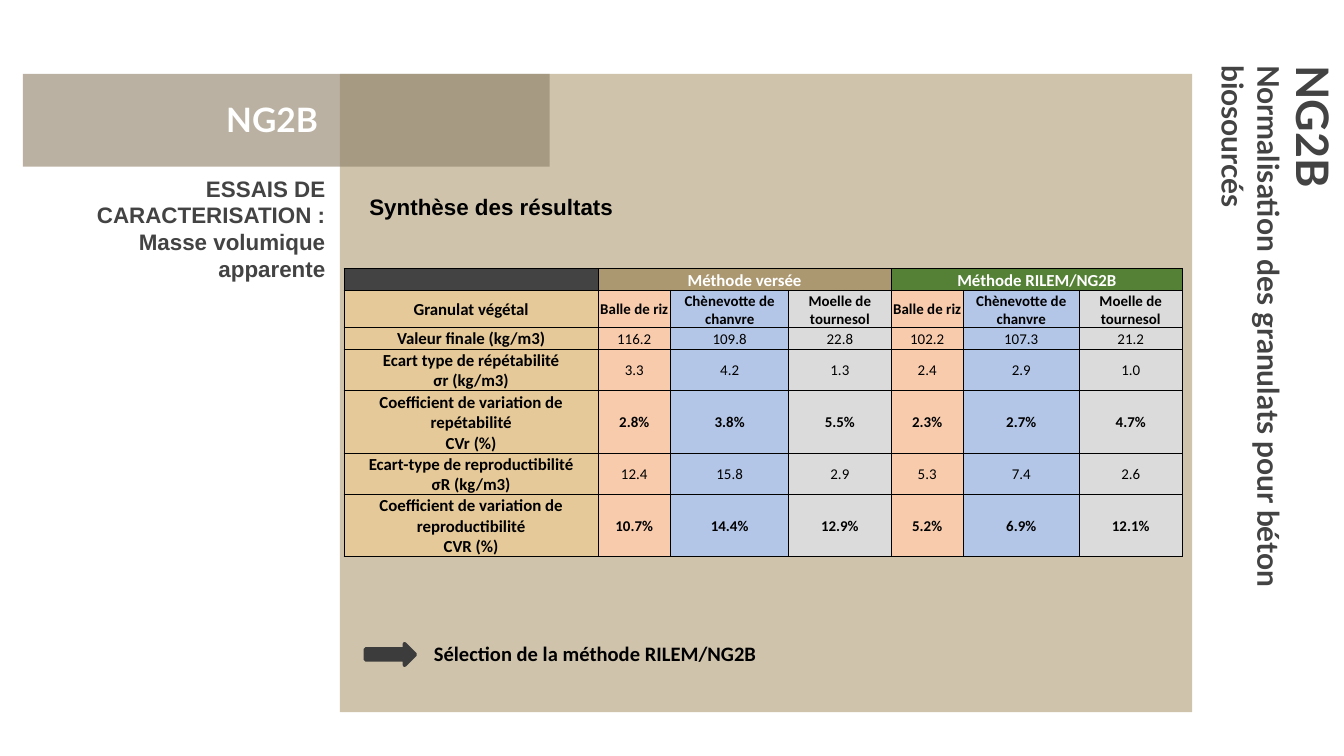
from lxml.etree import SubElement
from pptx import Presentation
from pptx.dml.color import RGBColor
from pptx.enum.shapes import MSO_SHAPE
from pptx.enum.text import MSO_ANCHOR, MSO_AUTO_SIZE, PP_ALIGN
from pptx.oxml.ns import qn
from pptx.util import Inches, Pt

# Content
PROJECT = "NG2B"
SUBTITLE = "Normalisation des granulats pour béton biosourcés"
TOPIC = ["ESSAIS DE CARACTERISATION :", "Masse volumique apparente"]
HEADING = "Synthèse des résultats"
CONCLUSION = "Sélection de la méthode RILEM/NG2B"
METHODS = [("Méthode versée", "AC9870"), ("Méthode RILEM/NG2B", "548135")]
MATERIALS = [("Balle de riz", "F8CBAC"), ("Chènevotte de chanvre", "B3C6E7"),
             ("Moelle de tournesol", "DBDBDB")]
RESULTS = [
    ("Valeur finale (kg/m3)", "116.2 109.8 22.8 102.2 107.3 21.2"),
    ("Ecart type de répétabilité\vσr (kg/m3)", "3.3 4.2 1.3 2.4 2.9 1.0"),
    ("Coefficient de variation de repétabilité\vCVr (%)", "2.8% 3.8% 5.5% 2.3% 2.7% 4.7%"),
    ("Ecart-type de reproductibilité\vσR (kg/m3)", "12.4 15.8 2.9 5.3 7.4 2.6"),
    ("Coefficient de variation de reproductibilité\vCVR (%)",
     "10.7% 14.4% 12.9% 5.2% 6.9% 12.1%"),
]
COLS = [1.89, 0.54, 0.88, 0.76, 0.54, 0.86, 0.77]
ROWS = [0.15, 0.26, 0.14, 0.31, 0.45, 0.31, 0.45]
DARK, BLACK, WHITE, LABEL = "434343", "000000", "FFFFFF", "E5C998"

# Widescreen 16:9 slide
prs = Presentation()
prs.slide_width, prs.slide_height = Inches(10), Inches(10 * 9 / 16)
slide = prs.slides.add_slide(prs.slide_layouts[5])


def color(value):
    return RGBColor.from_string(value)


def style(font, name, size, value, bold=True):
    font.name, font.size, font.bold = name, Pt(size), bold
    font.color.rgb = color(value)


def add_box(kind, x, y, w, h, fill):
    sp = slide.shapes.add_shape(kind, Inches(x), Inches(y), Inches(w), Inches(h))
    sp.shadow.inherit = False
    sp.fill.solid()
    sp.fill.fore_color.rgb = color(fill)
    sp.line.fill.background()
    return sp


def add_text(lines, x, y, w, h, font, align, inset=0.05, indent=0, first=0, wrap=True):
    sp = slide.shapes.add_textbox(Inches(x), Inches(y), Inches(w), Inches(h))
    tf = sp.text_frame
    tf.word_wrap = wrap
    tf.margin_top = tf.margin_bottom = Inches(inset)
    tf.text = "\n".join(lines)
    for p in tf.paragraphs:
        p.alignment = align
        pPr = p._p.get_or_add_pPr()
        pPr.set("marL", str(Inches(indent)))
        pPr.set("indent", str(Inches(first)))
        style(p.font, *font)
    return sp


def fill_cell(cell, text, fill, size=9, value=BLACK, bold=True):
    tcPr = cell._tc.get_or_add_tcPr()
    for side in ("a:lnL", "a:lnR", "a:lnT", "a:lnB"):
        ln = SubElement(tcPr, qn(side), w=str(Pt(0.5)))
        SubElement(SubElement(ln, qn("a:solidFill")), qn("a:srgbClr"), val=BLACK)
    cell.fill.solid()
    cell.fill.fore_color.rgb = color(fill)
    cell.margin_left = cell.margin_right = cell.margin_top = Inches(0.01)
    cell.margin_bottom = 0
    cell.vertical_anchor = MSO_ANCHOR.MIDDLE
    cell.text = text
    p = cell.text_frame.paragraphs[0]
    p.alignment = PP_ALIGN.CENTER
    style(p.font, "Calibri", size, value, bold)


# Background panel and vertical title
add_box(MSO_SHAPE.RECTANGLE, 2.53, 0.55, 6.34, 4.75, "CFC3AC")
title = slide.shapes.title
title.left, title.top, title.width, title.height = map(Inches, (7.01, 2.62, 5, 0.53))
title.rotation = 90
tf = title.text_frame
tf.word_wrap, tf.auto_size = True, MSO_AUTO_SIZE.NONE
tf.vertical_anchor = MSO_ANCHOR.MIDDLE
tf.margin_left = tf.margin_right = tf.margin_top = tf.margin_bottom = Inches(0.1)
tf.text = f"{PROJECT}\n{SUBTITLE}"
for p, size in zip(tf.paragraphs, (24, 16)):
    p.alignment = PP_ALIGN.LEFT
    p.space_before = Pt(0)
    style(p.font, "Lato", size, DARK)

# Translucent banner
banner = add_box(MSO_SHAPE.RECTANGLE, 0.17, 0.55, 3.92, 0.69, "908269")
rgb = banner.fill._xPr.find(qn("a:solidFill")).find(qn("a:srgbClr"))
SubElement(rgb, qn("a:alpha"), val="62000")
name = add_text([PROJECT], 0.26, 0.64, 3.53, 0.49, ("Lato", 18, WHITE), PP_ALIGN.CENTER, 0.1)
name.text_frame.vertical_anchor = MSO_ANCHOR.MIDDLE

# Topic and heading
add_text(TOPIC, 0.19, 1.2, 2.33, 0.9, ("Arial", 12, DARK), PP_ALIGN.RIGHT, 0.1, 0.19, -0.19)
add_text([HEADING], 2.46, 1.39, 2.23, 0.49, ("Arial", 12, BLACK), PP_ALIGN.JUSTIFY,
         indent=0.19, wrap=False)

# Results table
table = slide.shapes.add_table(len(ROWS), len(COLS), Inches(2.56), Inches(2),
                               Inches(sum(COLS)), Inches(sum(ROWS))).table
table.first_row = table.horz_banding = False
for col, w in zip(table.columns, COLS):
    col.width = Inches(w)
for row, h in zip(table.rows, ROWS):
    row.height = Inches(h)

fill_cell(table.cell(0, 0), "", DARK)
fill_cell(table.cell(1, 0), "Granulat végétal", LABEL)
span = len(MATERIALS)
for m, (method, fill) in enumerate(METHODS):
    start = 1 + m * span
    for c in range(start, start + span):
        fill_cell(table.cell(0, c), method if c == start else "", fill, value=WHITE)
    table.cell(0, start).merge(table.cell(0, start + span - 1))
for c, (material, fill) in enumerate(MATERIALS * len(METHODS), 1):
    fill_cell(table.cell(1, c), material, fill, 8)
for r, (label, values) in enumerate(RESULTS, 2):
    fill_cell(table.cell(r, 0), label, LABEL)
    for c, value in enumerate(values.split(), 1):
        fill_cell(table.cell(r, c), value, MATERIALS[(c - 1) % span][1], 8,
                  bold=value.endswith("%"))

# Conclusion
add_text([CONCLUSION], 2.94, 4.72, 6.44, 0.29, ("Calibri", 11, BLACK), PP_ALIGN.JUSTIFY,
         indent=0.38, first=-0.19)
arrow = add_box(MSO_SHAPE.RIGHT_ARROW, 2.72, 4.79, 0.37, 0.16, "3C3C3C")
arrow.line.color.rgb = color("3C3C3C")
arrow.line.width = Pt(2)

prs.save("out.pptx")
